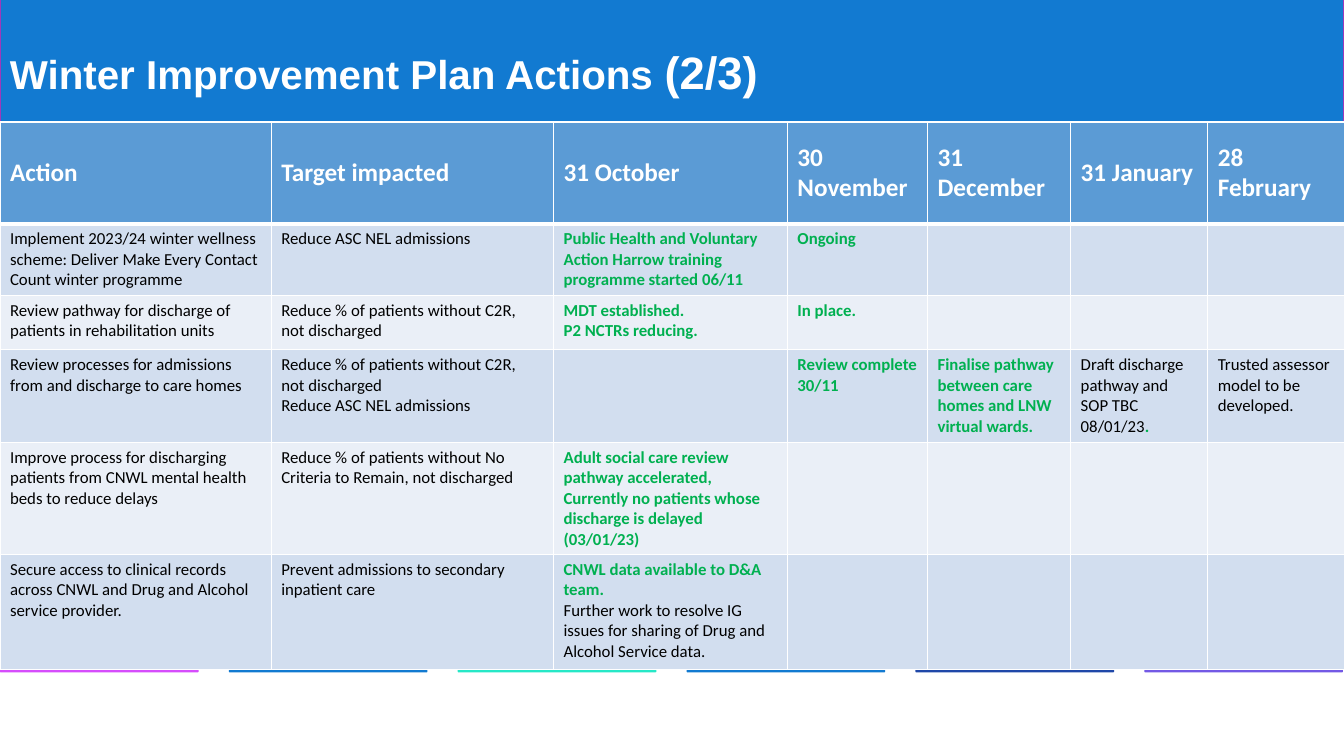
from lxml.etree import SubElement
from pptx import Presentation
from pptx.dml.color import RGBColor
from pptx.enum.shapes import MSO_SHAPE
from pptx.enum.text import MSO_ANCHOR
from pptx.oxml import parse_xml
from pptx.oxml.ns import nsdecls, qn
from pptx.util import Inches, Pt

WHITE, BLACK, GREEN = "FFFFFF", "000000", "00B050"
BLUE, HEADER_FILL = "127AD1", "5B9BD5"
BAND_FILLS = ["D2DEEF", "EAEFF7"]
STRIPE_COLORS = ["D64DFC", BLUE, "26E8C7", BLUE, "1F47A8", "7359E5"]
STRIPE_PITCH = 2.27

COL_WIDTHS = [2.69, 2.8, 2.32, 1.39, 1.42, 1.36, 1.36]
ROW_HEIGHTS = [1.01, 0.71, 0.54, 0.92, 1.11, 1.14]
HEADINGS = ["Action", "Target impacted", "31 October", "30 November",
            "31 December", "31 January", "28 February"]
# A line break starts a new paragraph; an asterisk switches to bold green.
ACTIONS = [
    ["Implement 2023/24 winter wellness scheme: Deliver Make Every Contact Count winter programme",
     "Reduce ASC NEL admissions",
     "*Public Health and Voluntary Action Harrow training programme started 06/11",
     "*Ongoing", "", "", ""],
    ["Review pathway for discharge of patients in rehabilitation units",
     "Reduce % of patients without C2R, not discharged",
     "*MDT established.\n*P2 NCTRs reducing.",
     "*In place.", "", "", ""],
    ["Review processes for admissions from and discharge to care homes",
     "Reduce % of patients without C2R, not discharged\nReduce ASC NEL admissions",
     "",
     "*Review complete 30/11",
     "*Finalise pathway between care homes and LNW virtual wards.",
     "Draft discharge pathway and SOP TBC 08/01/23*.",
     "Trusted assessor model to be developed."],
    ["Improve process for discharging patients from CNWL mental health beds to reduce delays",
     "Reduce % of patients without No Criteria to Remain, not discharged",
     "*Adult social care review pathway accelerated,\n"
     "*Currently no patients whose discharge is delayed (03/01/23)",
     "", "", "", ""],
    ["Secure access to clinical records across CNWL and Drug and Alcohol service provider.",
     "Prevent admissions to secondary inpatient care",
     "*CNWL data available to D&A team.\n"
     "Further work to resolve IG issues for sharing of Drug and Alcohol Service data.",
     "", "", "", ""],
]


def rgb(color):
    return RGBColor.from_string(color)


class SlideBuilder:
    title_font = "Arial"
    table_font = "Calibri"

    def __init__(self, s):
        self.s = s

    def run(self, p, text, size, color, font, bold):
        r = p.add_run()
        r.text = text
        r.font.name = font
        r.font.size = Pt(size)
        r.font.bold = bold
        r.font.color.rgb = rgb(color)

    def shape(self, kind, left, top, width, height, fill, line=None):
        sp = self.s.shapes.add_shape(kind, Inches(left), Inches(top), Inches(width), Inches(height))
        sp.shadow.inherit = False
        sp.fill.solid()
        sp.fill.fore_color.rgb = rgb(fill)
        if line:
            sp.line.color.rgb = rgb(line)
            sp.line.width = Pt(1)
        else:
            sp.line.fill.background()

    def title(self, left, top, width, height, runs):
        sp = self.s.shapes.add_textbox(Inches(left), Inches(top), Inches(width), Inches(height))
        tf = sp.text_frame
        tf.word_wrap = True
        tf.vertical_anchor = MSO_ANCHOR.MIDDLE
        p = tf.paragraphs[0]
        p.line_spacing = 0.9
        for text, size in runs:
            self.run(p, text, size, WHITE, self.title_font, True)

    def borders(self, cell, top, bottom):
        """Draw white cell edges, one point wide at the sides."""
        tcPr = cell._tc.get_or_add_tcPr()
        edges = [("lnL", 1), ("lnR", 1), ("lnT", top), ("lnB", bottom)]
        for i, (tag, width) in enumerate(edges):
            ln = parse_xml(f'<a:{tag} {nsdecls("a")} w="{Pt(width)}"/>')
            fill = SubElement(ln, qn("a:solidFill"))
            SubElement(fill, qn("a:srgbClr"), val=WHITE)
            tcPr.insert(i, ln)

    def fill_cell(self, cell, text, fill, size, color, bold):
        cell.fill.solid()
        cell.fill.fore_color.rgb = rgb(fill)
        tf = cell.text_frame
        for i, line in enumerate(text.split("\n")):
            p = tf.add_paragraph() if i else tf.paragraphs[0]
            p.font.size = Pt(size)
            for j, part in enumerate(line.split("*")):
                if part:
                    done = j % 2 == 1
                    self.run(p, part, size, GREEN if done else color, self.table_font, bold or done)

    def table(self, left, top, widths, heights, headings, body):
        frame = self.s.shapes.add_table(len(heights), len(widths), Inches(left), Inches(top),
                                        Inches(sum(widths)), Inches(sum(heights)))
        table = frame.table
        for column, width in zip(table.columns, widths):
            column.width = Inches(width)
        for row, height in zip(table.rows, heights):
            row.height = Inches(height)
        for i, texts in enumerate([headings] + body):
            for j, text in enumerate(texts):
                cell = table.cell(i, j)
                if i == 0:
                    self.fill_cell(cell, text, HEADER_FILL, 18, WHITE, True)
                    cell.vertical_anchor = MSO_ANCHOR.MIDDLE
                else:
                    self.fill_cell(cell, text, BAND_FILLS[(i - 1) % 2], 12, BLACK, False)
                self.borders(cell, 3 if i == 1 else 1, 3 if i == 0 else 1)


def main():
    prs = Presentation()
    prs.slide_width, prs.slide_height = Inches(13.33), Inches(7.5)
    slide = SlideBuilder(prs.slides.add_slide(prs.slide_layouts[6]))
    slide.shape(MSO_SHAPE.RECTANGLE, 0, -0.03, 13.33, 1.25, BLUE, "9E39BA")
    for i, color in enumerate(STRIPE_COLORS):
        slide.shape(MSO_SHAPE.ROUNDED_RECTANGLE, i * STRIPE_PITCH, 6.62, 1.97, 0.05, color)
    slide.title(0, 0.02, 11.5, 1.45, [("Winter Improvement Plan Actions ", 28.8), ("(2/3)", 32.4)])
    slide.table(0, 1.21, COL_WIDTHS, ROW_HEIGHTS, HEADINGS, ACTIONS)
    prs.save("out.pptx")


if __name__ == "__main__":
    main()
